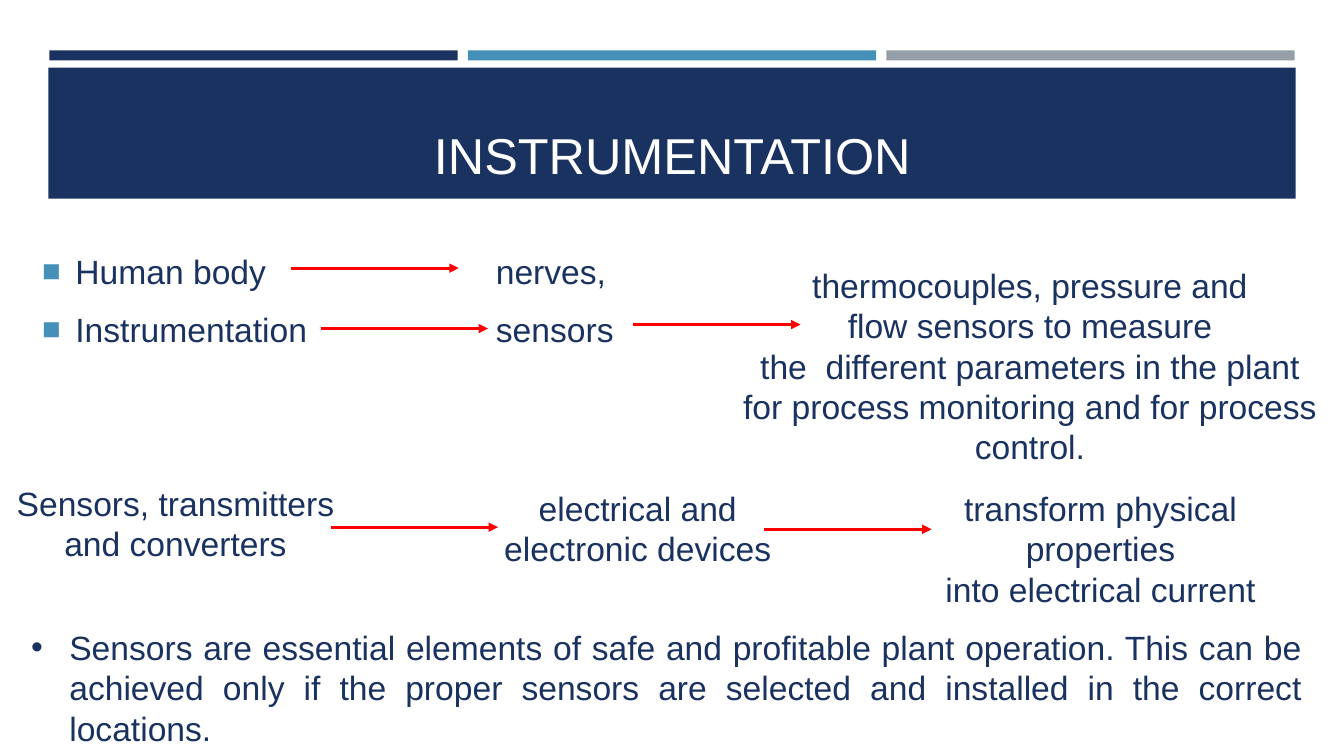
"""Builds the Instrumentation slide with its arrows and sensor notes."""
from pptx import Presentation
from pptx import util as u
from pptx.dml.color import RGBColor
from pptx.enum import shapes, text
from pptx.oxml import parse_xml
from pptx.oxml.ns import nsdecls, qn

NAVY = RGBColor(0x1A, 0x32, 0x60)
BLUE = RGBColor(0x45, 0x90, 0xB8)
GREY = RGBColor(0x96, 0x9F, 0xA7)
RED = RGBColor(0xFF, 0x00, 0x00)
WHITE = RGBColor(0xFF, 0xFF, 0xFF)
CENTER = text.PP_ALIGN.CENTER


def write(frame, lines, size=24, color=NAVY, align=CENTER, anchor=text.MSO_ANCHOR.TOP,
          wrap=True, before=0, after=0):
    """Fill a text frame with one formatted paragraph per line."""
    frame.word_wrap = wrap
    frame.auto_size = text.MSO_AUTO_SIZE.NONE
    frame.vertical_anchor = anchor
    for index, line in enumerate(lines):
        paragraph = frame.paragraphs[0] if index == 0 else frame.add_paragraph()
        paragraph.alignment = align
        paragraph.space_before = u.Pt(before)
        paragraph.space_after = u.Pt(after)
        run = paragraph.add_run()
        run.text = line
        run.font.name = "Arial"
        run.font.size = u.Pt(size)
        run.font.color.rgb = color


class SlideBuilder:
    """Holds the style and the current slide."""

    def __init__(self, presentation):
        """Add a title-only slide."""
        self.slide = presentation.slides.add_slide(presentation.slide_layouts[5])
        self.shapes = self.slide.shapes

    def bar(self, left, top, width, height, color):
        """Draw a plain filled rectangle."""
        shape = self.shapes.add_shape(shapes.MSO_SHAPE.RECTANGLE, u.Inches(left),
                                      u.Inches(top), u.Inches(width), u.Inches(height))
        shape.shadow.inherit = False
        shape.fill.solid()
        shape.fill.fore_color.rgb = color
        shape.line.fill.background()

    def title(self, left, top, width, height, words):
        """Place the title in front of its banner."""
        title = self.shapes.title
        title.left, title.top = u.Inches(left), u.Inches(top)
        title.width, title.height = u.Inches(width), u.Inches(height)
        write(title.text_frame, [words], size=36, color=WHITE,
              anchor=text.MSO_ANCHOR.BOTTOM)
        title._element.getparent().append(title._element)

    def text_box(self, left, top, width, height, lines, **style):
        """Add a text box and return its paragraphs."""
        shape = self.shapes.add_textbox(u.Inches(left), u.Inches(top),
                                        u.Inches(width), u.Inches(height))
        write(shape.text_frame, lines, **style)
        return shape.text_frame.paragraphs

    def bullet(self, paragraph, symbol, indent, color=NAVY, percent=100, tab=None):
        """Give a paragraph a hanging bullet and an optional tab stop."""
        properties = paragraph._p.get_or_add_pPr()
        properties.set("marL", str(u.Inches(indent)))
        properties.set("indent", str(u.Inches(-indent)))
        parts = [f'<a:buClr {nsdecls("a")}><a:srgbClr val="{color}"/></a:buClr>',
                 f'<a:buSzPct {nsdecls("a")} val="{percent * 1000}"/>',
                 f'<a:buFont {nsdecls("a")} typeface="Arial"/>',
                 f'<a:buChar {nsdecls("a")} char="{symbol}"/>']
        if tab:
            parts.append(f'<a:tabLst {nsdecls("a")}>'
                         f'<a:tab pos="{u.Inches(tab)}" algn="l"/></a:tabLst>')
        for part in parts:
            properties.append(parse_xml(part))

    def arrow(self, left, top, length=1.66):
        """Draw a horizontal red arrow pointing right."""
        line = self.shapes.add_connector(shapes.MSO_CONNECTOR.STRAIGHT, u.Inches(left),
                                         u.Inches(top), u.Inches(left + length),
                                         u.Inches(top))
        line.line.color.rgb = RED
        line.line.width = u.Pt(2.25)
        outline = line._element.spPr.find(qn("a:ln"))
        outline.append(parse_xml(f'<a:tailEnd {nsdecls("a")} type="triangle"/>'))
        line._element.spPr.append(parse_xml(f'<a:effectLst {nsdecls("a")}/>'))


def main():
    """Build and save the slide."""
    presentation = Presentation()
    presentation.slide_width = u.Inches(13.33)
    presentation.slide_height = u.Inches(7.5)
    builder = SlideBuilder(presentation)

    for column, color in enumerate((NAVY, BLUE, GREY)):
        builder.bar(0.49 + column * 4.15, 0.5, 4.05, 0.1, color)
    builder.bar(0.48, 0.67, 12.37, 1.3, NAVY)
    builder.title(0.64, 0.77, 12.06, 1.11, "INSTRUMENTATION")

    comparison = builder.text_box(
        0.32, 2.4, 6.5, 1.15, ["Human body\tnerves,", "Instrumentation\tsensors"],
        align=text.PP_ALIGN.LEFT, anchor=text.MSO_ANCHOR.MIDDLE, before=6.4, after=6)
    for paragraph in comparison:
        builder.bullet(paragraph, "■", 0.33, BLUE, 92, tab=4.5)

    builder.text_box(6.88, 2.58, 6.67, 2.12, [
        "thermocouples, pressure and", "flow sensors to measure",
        "the  different parameters in the plant",
        "for process monitoring and for process control."])
    builder.text_box(7.58, 4.79, 6.67, 1.31, [
        "transform physical", "properties", "into electrical current"])
    builder.text_box(-0.2, 4.74, 3.88, 0.91, ["Sensors, transmitters", "and converters"])
    builder.text_box(4.84, 4.79, 2.97, 0.91, ["electrical and", "electronic devices"],
                     wrap=False)

    for left, top in ((2.89, 2.66), (3.18, 3.26), (6.28, 3.22), (3.28, 5.23), (7.58, 5.25)):
        builder.arrow(left, top)

    conclusion = builder.text_box(0.21, 6.17, 12.8, 1.31, [
        "Sensors are essential elements of safe and profitable plant operation. "
        "This can be achieved only if the proper sensors are selected and installed "
        "in the correct locations."], align=text.PP_ALIGN.JUSTIFY)
    builder.bullet(conclusion[0], "•", 0.38)

    presentation.save("out.pptx")


if __name__ == "__main__":
    main()
